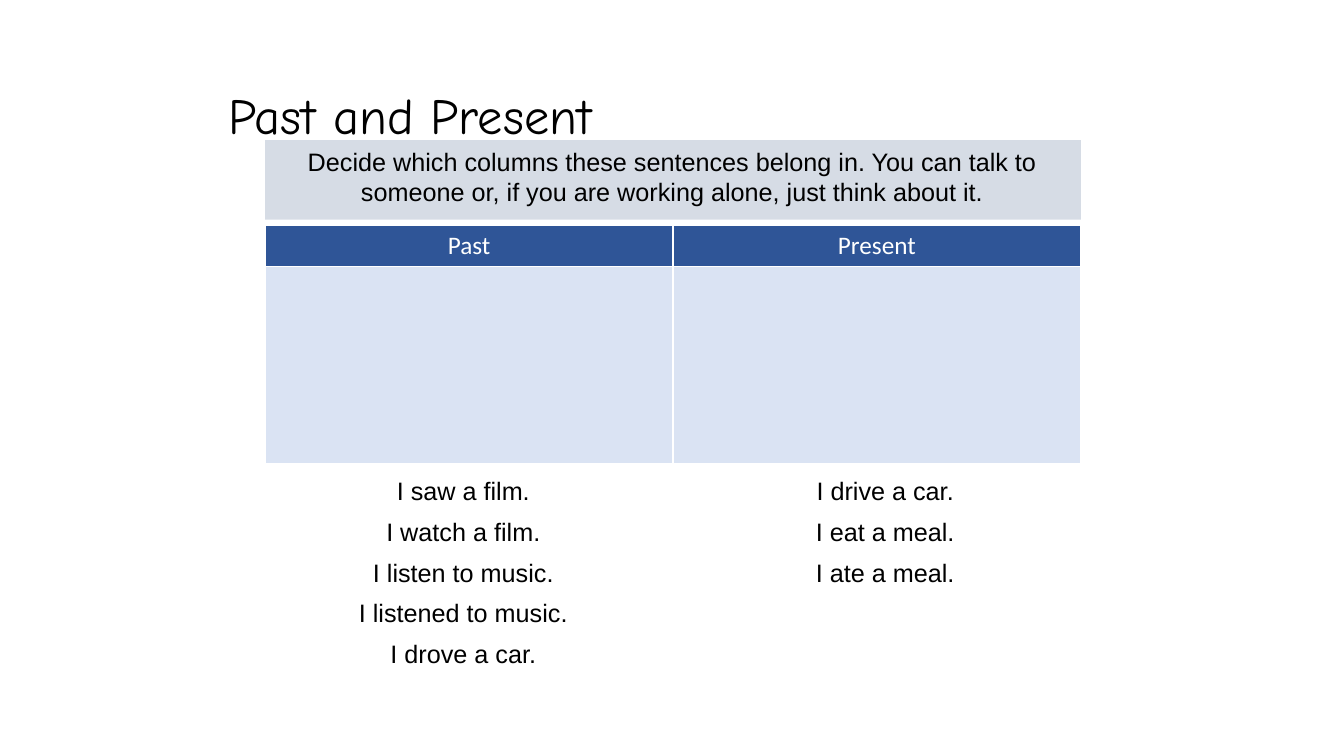
from lxml import etree
from pptx import Presentation
from pptx import util as u
from pptx.dml import color as c
from pptx.enum import shapes, text
from pptx.oxml import ns

HUES = {"ink": "000000", "white": "FFFFFF", "band": "D6DCE5",
        "head": "2F5597", "cell": "DAE3F3"}


def rgb(name):
    return c.RGBColor.from_string(HUES[name])


def write(frame, words, font="Arial", size=18, hue="ink",
          align=text.PP_ALIGN.CENTER, space=None):
    frame.word_wrap = True
    para = frame.paragraphs[0]
    para.alignment = align
    para.line_spacing = space
    run = para.add_run()
    run.text = words
    run.font.name = font
    run.font.size = u.Pt(size)
    run.font.bold = False
    run.font.color.rgb = rgb(hue)


deck = Presentation()
deck.slide_width, deck.slide_height = u.Inches(13.33), u.Inches(7.5)
slide = deck.slides.add_slide(deck.slide_layouts[5])
parts = slide.shapes

# Instruction band
band = parts.add_shape(shapes.MSO_SHAPE.RECTANGLE, u.Inches(2.63),
                       u.Inches(1.39), u.Inches(8.09), u.Inches(0.79))
band.shadow.inherit = False
band.fill.solid()
band.fill.fore_color.rgb = rgb("band")
band.line.fill.background()
task = parts.add_textbox(u.Inches(2.62), u.Inches(1.4),
                         u.Inches(8.09), u.Inches(0.71))
write(task.text_frame, "Decide which columns these sentences belong in. "
      "You can talk to someone or, if you are working alone, "
      "just think about it.")

# Title
title = parts.title
title.left, title.top = u.Inches(2.17), u.Inches(0.7)
title.width, title.height = u.Inches(8.99), u.Inches(0.95)
title.text_frame.auto_size = text.MSO_AUTO_SIZE.NONE
title.text_frame.vertical_anchor = text.MSO_ANCHOR.MIDDLE
write(title.text_frame, "Past and Present", font="Comic Neue", size=36,
      align=text.PP_ALIGN.LEFT, space=0.9)

# Sorting table
grid = parts.add_table(2, 2, u.Inches(2.63), u.Inches(2.24),
                       u.Inches(8.09), u.Inches(2.36)).table
grid.rows[0].height, grid.rows[1].height = u.Inches(0.4), u.Inches(1.96)
for cell in grid.iter_cells():
    props = cell._tc.get_or_add_tcPr()
    for side in ("lnL", "lnR", "lnT", "lnB"):
        edge = etree.SubElement(props, ns.qn("a:" + side), w=str(u.Pt(1)))
        fill = etree.SubElement(edge, ns.qn("a:solidFill"))
        etree.SubElement(fill, ns.qn("a:srgbClr"), val=HUES["white"])
    cell.fill.solid()
    cell.fill.fore_color.rgb = rgb("cell")
for col, name in enumerate(("Past", "Present")):
    head = grid.cell(0, col)
    head.fill.fore_color.rgb = rgb("head")
    write(head.text_frame, name, font="Calibri", hue="white")

# Sentences to sort: left edge, width, lines
lists = [
    (2.49, 4.21, ["I saw a film.", "I watch a film.", "I listen to music.",
                  "I listened to music.", "I drove a car."]),
    (6.71, 4.14, ["I drive a car.", "I eat a meal.", "I ate a meal."]),
]
for left, width, lines in lists:
    for row, line in enumerate(lines):
        box = parts.add_textbox(u.Inches(left), u.Inches(4.67 + 0.403 * row),
                                u.Inches(width), u.Inches(0.4))
        write(box.text_frame, line)

deck.save("out.pptx")
